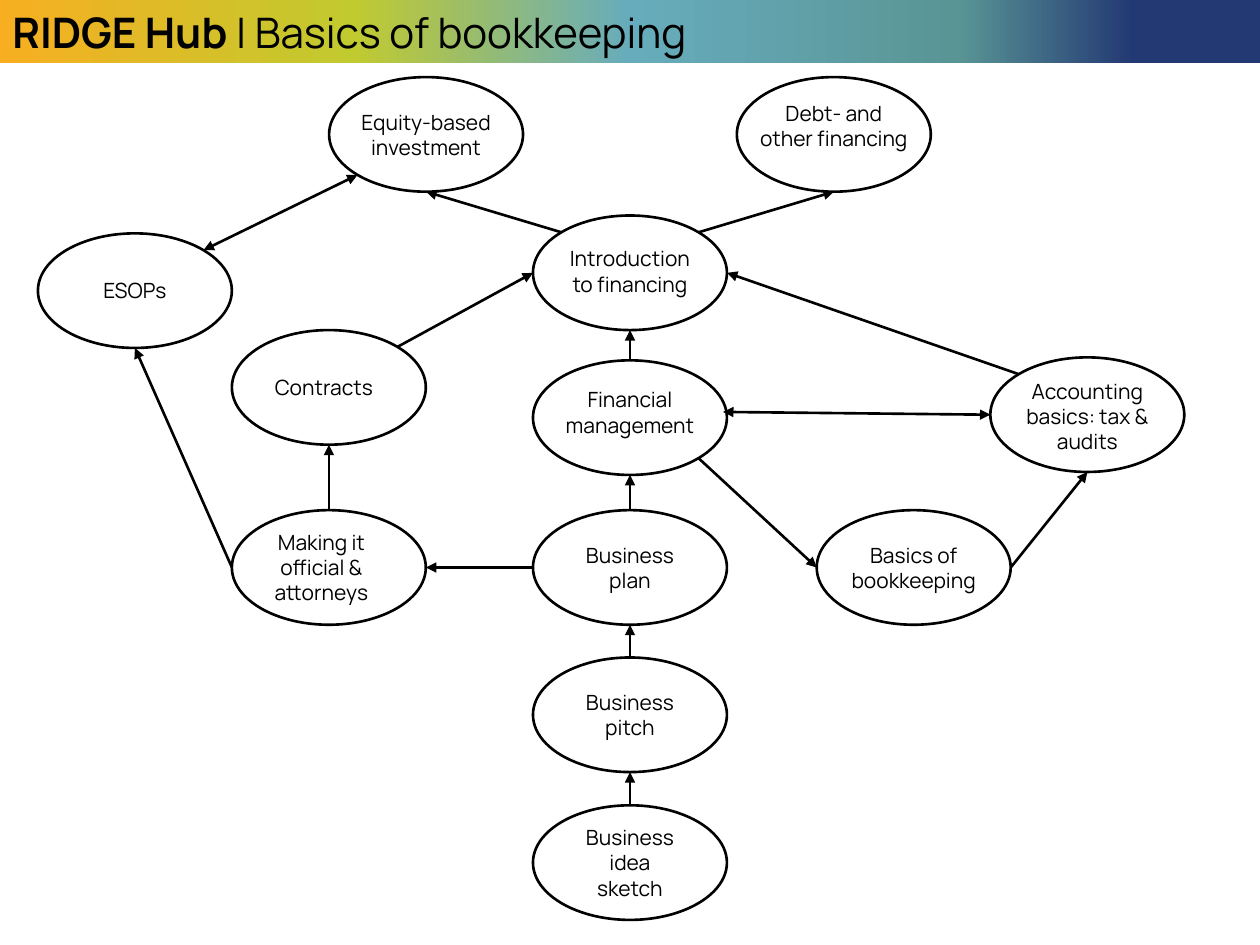
import math

from lxml import etree
from pptx import Presentation
from pptx import util as u
from pptx.dml.color import RGBColor
from pptx.enum import shapes, text
from pptx.oxml.ns import qn

FONT = "Manrope"
COLORS = {"ink": "000000", "gold": "F7AF21", "lime": "C1CA2F",
          "sky": "67ACBC", "teal": "599595", "navy": "233973"}
STOPS = [(0, "gold"), (28, "lime"), (50, "sky"), (76, "teal"), (90, "navy")]

WIDE, HIGH = 3.91, 2.31  # size of each oval, in cm
MID, BASE = 12.7, 11.44  # main column and shared row, in cm

# key: (label, centre x, centre y, text width, text rows, text shift x, y)
NODES = {
    "sketch": ("Business idea sketch", MID, 17.39, 2.51, 3, 0, 0),
    "pitch": ("Business pitch", MID, 14.41, 2.51, 2, 0, 0),
    "plan": ("Business plan", MID, BASE, 2.51, 2, 0, 0),
    "manage": ("Financial management", MID, 8.42, 3.76, 2, 0, -0.11),
    "intro": ("Introduction to financing", MID, 5.5, 3.23, 2, 0, -0.03),
    "books": ("Basics of bookkeeping", 18.42, BASE, 3.51, 2, 0, 0),
    "legal": ("Making it official & attorneys", 6.63, BASE, 2.79, 3, -0.15, 0),
    "audit": ("Accounting basics: tax & audits", 21.92, 8.36, 3.23, 3, 0, 0.03),
    "deals": ("Contracts", 6.63, 7.81, 3.2, 1, -0.1, 0),
    "equity": ("Equity-based\ninvestment", 8.59, 2.71, 3.56, 2, 0, 0),
    "debt": ("Debt- and other financing", 16.81, 2.71, 3.56, 3, 0, 0.08),
    "esop": ("ESOPs", 2.72, 5.86, 3.2, 1, 0, 0),
}

# Points on an oval, as shares of its half width and half height
D = math.sqrt(0.5)
SIDES = {"n": (0, -1), "s": (0, 1), "w": (-1, 0), "e": (1, 0),
         "ne": (D, -D), "nw": (-D, -D), "se": (D, D), "sw": (-D, D),
         "label": (0.96, -0.1)}

# from, side, to, side, arrow at both ends
LINKS = [
    ("sketch", "n", "pitch", "s", False),
    ("pitch", "n", "plan", "s", False),
    ("plan", "n", "manage", "s", False),
    ("manage", "n", "intro", "s", False),
    ("intro", "ne", "debt", "s", False),
    ("intro", "nw", "equity", "s", False),
    ("plan", "w", "legal", "e", False),
    ("manage", "se", "books", "w", False),
    ("books", "e", "audit", "s", False),
    ("legal", "n", "deals", "s", False),
    ("deals", "ne", "intro", "w", False),
    ("audit", "w", "manage", "label", True),
    ("audit", "nw", "intro", "e", False),
    ("equity", "sw", "esop", "ne", True),
    ("legal", "w", "esop", "s", False),
]


def style(run, size, bold=False):
    run.font.name = FONT
    run.font.size = u.Pt(size)
    run.font.bold = bold
    run.font.color.rgb = RGBColor.from_string(COLORS["ink"])


def stroke(line):
    line.color.rgb = RGBColor.from_string(COLORS["ink"])
    line.width = u.Pt(1.5)


def pad(frame):
    frame.margin_left = frame.margin_right = u.Cm(0.25)
    frame.margin_top = frame.margin_bottom = u.Cm(0.13)
    frame.word_wrap = True


def blend(fill, bar):
    """Fill the bar with the colour stops, from left to right."""
    fill.gradient()
    fill.gradient_angle = 0
    stops = bar._element.spPr.find(qn("a:gradFill")).find(qn("a:gsLst"))
    for old in list(stops):
        stops.remove(old)
    for share, name in STOPS:
        stop = etree.SubElement(stops, qn("a:gs"), pos=str(share * 1000))
        etree.SubElement(stop, qn("a:srgbClr"), val=COLORS[name])


def add_title(slide):
    bar = slide.shapes.add_shape(shapes.MSO_SHAPE.RECTANGLE,
                                 0, 0, u.Cm(25.4), u.Cm(1.27))
    bar.shadow.inherit = False
    bar.line.fill.background()
    blend(bar.fill, bar)
    frame = bar.text_frame
    pad(frame)
    frame.vertical_anchor = text.MSO_ANCHOR.MIDDLE
    para = frame.paragraphs[0]
    para.alignment = text.PP_ALIGN.LEFT
    for words, bold in (("RIDGE Hub ", True), ("| Basics of bookkeeping", False)):
        run = para.add_run()
        run.text = words
        style(run, 24, bold)


def add_node(slide, label, x, y, width, rows, dx, dy):
    oval = slide.shapes.add_shape(
        shapes.MSO_SHAPE.OVAL, u.Cm(x - WIDE / 2), u.Cm(y - HIGH / 2),
        u.Cm(WIDE), u.Cm(HIGH))
    oval.shadow.inherit = False
    oval.fill.background()
    stroke(oval.line)

    height = 0.26 + 0.51 * rows
    box = slide.shapes.add_textbox(
        u.Cm(x + dx - width / 2), u.Cm(y + dy - height / 2),
        u.Cm(width), u.Cm(height))
    frame = box.text_frame
    pad(frame)
    frame.text = label
    for para in frame.paragraphs:
        para.alignment = text.PP_ALIGN.CENTER
        style(para.runs[0], 12)


def spot(key, side):
    """Give the place on a node's outline where a link meets it."""
    x, y = NODES[key][1:3]
    across, down = SIDES[side]
    return u.Cm(x + across * WIDE / 2), u.Cm(y + down * HIGH / 2)


def add_link(slide, start, out, end, into, both):
    link = slide.shapes.add_connector(shapes.MSO_CONNECTOR.STRAIGHT,
                                      *spot(start, out), *spot(end, into))
    stroke(link.line)
    line = link.line._get_or_add_ln()
    for tag in ("a:headEnd", "a:tailEnd") if both else ("a:tailEnd",):
        etree.SubElement(line, qn(tag), type="triangle", w="med", len="med")
    etree.SubElement(link._element.spPr, qn("a:effectLst"))


def main():
    deck = Presentation()
    deck.slide_width, deck.slide_height = u.Cm(25.4), u.Cm(19.05)
    slide = deck.slides.add_slide(deck.slide_layouts[6])
    add_title(slide)
    for node in NODES.values():
        add_node(slide, *node)
    for link in LINKS:
        add_link(slide, *link)
    deck.save("out.pptx")


if __name__ == "__main__":
    main()
